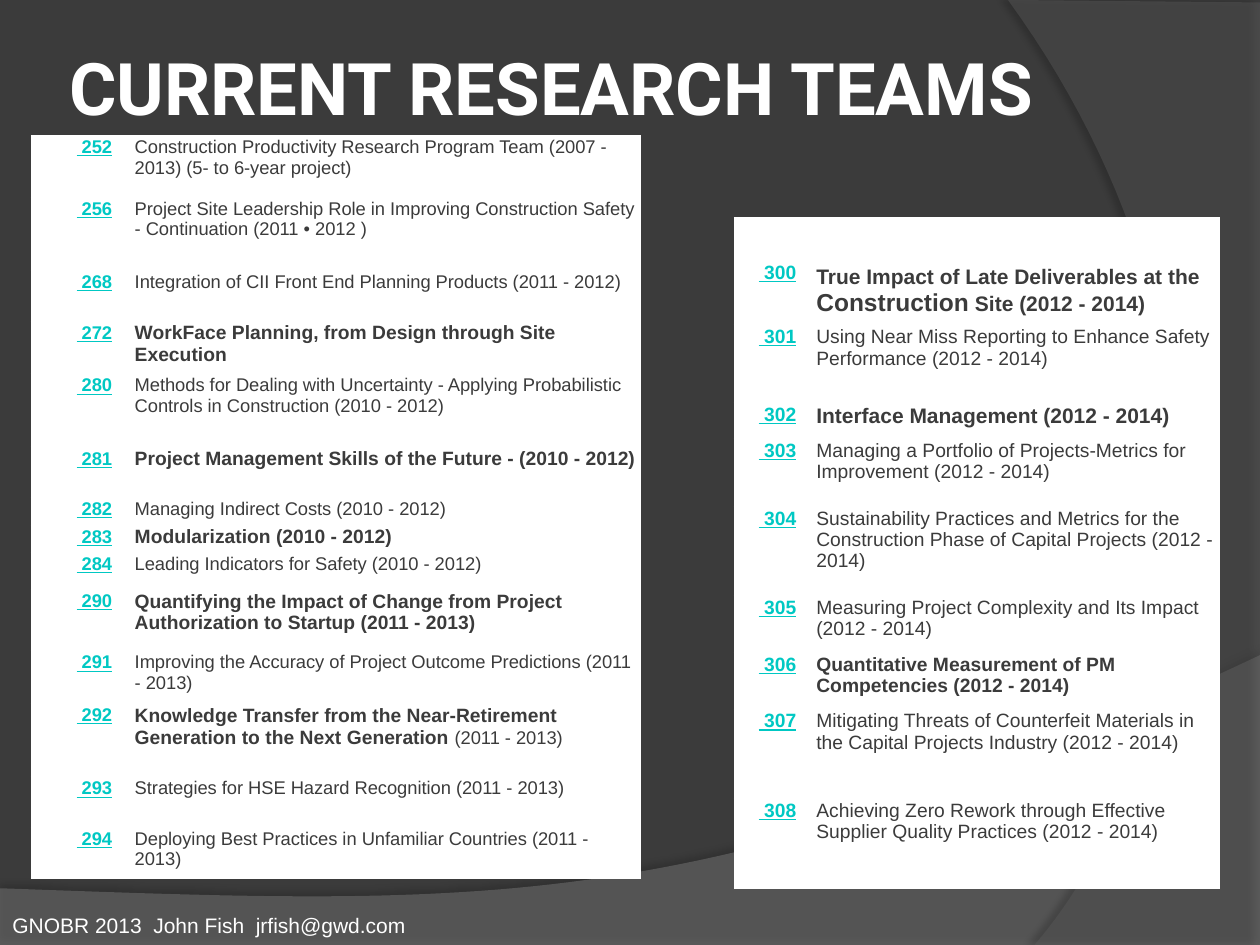
from lxml.etree import SubElement
from pptx import Presentation
from pptx.dml.color import RGBColor
from pptx.enum.text import MSO_ANCHOR as Anchor, MSO_AUTO_SIZE as AutoSize, PP_ALIGN as Align
from pptx.oxml.ns import qn
from pptx.util import Inches, Pt

COLORS = {"bg": "3B3B3B", "white": "FFFFFF", "link": "00C8C3", "text": "3B3B3B",
          "wave": "7F7F7F", "arc": "5E5E5E", "shadow": "000000"}

LEFT_TEAMS = [
    (252, 0.49, "Construction Productivity Research Program Team (2007 - 2013) (5- to 6-year project)"),
    (256, 0.58, "Project Site Leadership Role in Improving Construction Safety - Continuation (2011 • 2012 )"),
    (268, 0.4, "Integration of CII Front End Planning Products (2011 - 2012)"),
    (272, 0.42, [("WorkFace Planning, from Design through Site Execution", 11, True)]),
    (280, 0.58, "Methods for Dealing with Uncertainty - Applying Probabilistic Controls in Construction (2010 - 2012)"),
    (281, 0.4, [("Project Management Skills of the Future - (2010 - 2012)", 11, True)]),
    (282, 0.22, "Managing Indirect Costs (2010 - 2012)"),
    (283, 0.22, [("Modularization (2010 - 2012)", 11, True)]),
    (284, 0.29, "Leading Indicators for Safety (2010 - 2012)"),
    (290, 0.49, [("Quantifying the Impact of Change from Project Authorization to Startup (2011 - 2013)", 11, True)]),
    (291, 0.42, "Improving the Accuracy of Project Outcome Predictions (2011 - 2013)"),
    (292, 0.58, [("Knowledge", 11, True), (" ", 10.5, False),
                 ("Transfer from the Near-Retirement Generation to the Next Generation ", 11, True),
                 ("(2011 - 2013)", 10.5, False)]),
    (293, 0.4, "Strategies for HSE Hazard Recognition (2011 - 2013)"),
    (294, 0.4, "Deploying Best Practices in Unfamiliar Countries (2011 - 2013)"),
]

RIGHT_TEAMS = [
    (300, 0.85, [("True Impact of Late Deliverables at the ", 12, True),
                 ("Construction", 14, True), (" Site (2012 - 2014)", 12, True)]),
    (301, 0.62, "Using Near Miss Reporting to Enhance Safety Performance (2012 - 2014)"),
    (302, 0.28, [("Interface Management (2012 - 2014)", 12, True)]),
    (303, 0.54, "Managing a Portfolio of Projects-Metrics for Improvement (2012 - 2014)"),
    (304, 0.71, "Sustainability Practices and Metrics for the Construction Phase of Capital Projects (2012 - 2014)"),
    (305, 0.45, "Measuring Project Complexity and Its Impact (2012 - 2014)"),
    (306, 0.45, [("Quantitative Measurement of PM Competencies (2012 - 2014)", 11, True)]),
    (307, 0.71, "Mitigating Threats of Counterfeit Materials in the Capital Projects Industry (2012 - 2014)"),
    (308, 0.71, "Achieving Zero Rework through Effective Supplier Quality Practices (2012 - 2014)"),
]


def rgb(name):
    """Return the palette colour of that name."""
    return RGBColor.from_string(COLORS[name])


def add_text(p, text, size, color, font="Arial", bold=False, underline=False):
    """Append a formatted run to a paragraph."""
    r = p.add_run()
    r.text = text
    f = r.font
    f.name, f.size, f.bold, f.underline = font, Pt(size), bold, underline
    f.color.rgb = rgb(color)


def bezier(p0, p1, p2, p3, steps=60):
    """Return points along a cubic curve, both ends included."""
    def at(t, a, b, c, d):
        u = 1 - t
        return u**3 * a + 3 * u * u * t * b + 3 * u * t * t * c + t**3 * d
    return [tuple(at(i / steps, *axis) for axis in zip(p0, p1, p2, p3))
            for i in range(steps + 1)]


def add_swoosh(slide, points, color, opacity, shadow_opacity, distance, direction):
    """Draw a translucent outline with a soft shadow."""
    pts = [(Inches(x), Inches(y)) for x, y in points]
    builder = slide.shapes.build_freeform(*pts[0])
    builder.add_line_segments(pts[1:], close=True)
    sp = builder.convert_to_shape()
    sp.fill.solid()
    sp.fill.fore_color.rgb = rgb(color)
    sp.line.fill.background()
    sp.shadow.inherit = False
    fill = sp._element.spPr.find(qn("a:solidFill"))
    SubElement(fill[0], qn("a:alpha"), val=str(opacity * 1000))
    effects = sp._element.spPr.find(qn("a:effectLst"))
    shadow = SubElement(effects, qn("a:outerShdw"), blurRad=str(Pt(4)), dist=str(Pt(distance)),
                        dir=str(direction * 60000), algn="ctr", rotWithShape="0")
    clr = SubElement(shadow, qn("a:srgbClr"), val=COLORS["shadow"])
    SubElement(clr, qn("a:alpha"), val=str(shadow_opacity * 1000))


def add_backdrop(slide, w, h):
    """Fill the background and draw the wave and the arc."""
    slide.background.fill.solid()
    slide.background.fill.fore_color.rgb = rgb("bg")
    wave = [(0, h), (w, h)] + bezier((w, 5.2), (5.59, 7.29), (3.91, 7.19), (0, 7.05))
    add_swoosh(slide, wave, "wave", 45, 35, 3.5, 270)
    arc = [(w, 0.02), (w, h)] + bezier((8.21, h), (9.35, 6.19), (10.18, 3), (8, 0))
    add_swoosh(slide, arc, "arc", 40, 45, 4, 180)


def add_title(slide, x, y, w, h):
    """Place and format the title in front of the backdrop."""
    sp = slide.shapes.title
    slide.shapes._spTree.append(sp._element)
    sp.left, sp.top, sp.width, sp.height = map(Inches, (x, y, w, h))
    tf = sp.text_frame
    tf.auto_size, tf.word_wrap, tf.vertical_anchor = AutoSize.NONE, True, Anchor.MIDDLE
    tf.margin_left = tf.margin_right = tf.margin_top = tf.margin_bottom = Inches(0.05)
    p = tf.paragraphs[0]
    p.alignment = Align.LEFT
    add_text(p, "CURRENT RESEARCH TEAMS", 41.4, "white", font="Roboto", bold=True)


def add_footer(slide, x, y, w, h):
    """Add the presenter line."""
    tf = slide.shapes.add_textbox(*map(Inches, (x, y, w, h))).text_frame
    tf.word_wrap = True
    add_text(tf.paragraphs[0], "GNOBR 2013  John Fish  jrfish@gwd.com", 12, "white")


def add_teams(slide, x, y, widths, teams, size, margin, first_offsets=(0, 0, 0)):
    """Add a table of team numbers and names."""
    height = sum(row[1] for row in teams)
    box = map(Inches, (x, y, sum(widths), height))
    table = slide.shapes.add_table(len(teams), len(widths), *box).table
    table.first_row = table.horz_banding = False
    for col, width in zip(table.columns, widths):
        col.width = Inches(width)
    for i, (number, row_height, name) in enumerate(teams):
        table.rows[i].height = Inches(row_height)
        cells = [table.cell(i, j) for j in range(len(widths))]
        for cell, offset in zip(cells, first_offsets):
            cell.fill.solid()
            cell.fill.fore_color.rgb = rgb("white")
            cell.margin_left = cell.margin_right = Inches(margin)
            cell.margin_top = Inches(0.01 + (offset if i == 0 else 0))
            cell.margin_bottom = Inches(0.01)
        p_number, p_gap, p_name = (cell.text_frame.paragraphs[0] for cell in cells)
        p_number.alignment = Align.RIGHT
        add_text(p_number, f" {number}", size, "link", bold=True, underline=True)
        SubElement(p_gap._p, qn("a:endParaRPr"), sz=str(int(size * 100)))
        runs = [(name, size, False)] if isinstance(name, str) else name
        for text, run_size, bold in runs:
            add_text(p_name, text, run_size, "text", bold=bold)


def main():
    """Build and save the slide."""
    prs = Presentation()
    prs.slide_width, prs.slide_height = Inches(10), Inches(7.5)
    slide = prs.slides.add_slide(prs.slide_layouts[5])
    add_backdrop(slide, 10, 7.5)
    add_title(slide, 0.5, 0.3, 9.25, 0.78)
    add_footer(slide, 0, 7.19, 4.75, 0.3)
    add_teams(slide, 0.25, 1.08, (0.66, 0.14, 4.03), LEFT_TEAMS, 10.5, 0.02)
    add_teams(slide, 5.83, 1.73, (0.52, 0.08, 3.23), RIGHT_TEAMS, 11, 0.03, (0.34, 0, 0.37))
    prs.save("out.pptx")


if __name__ == "__main__":
    main()
